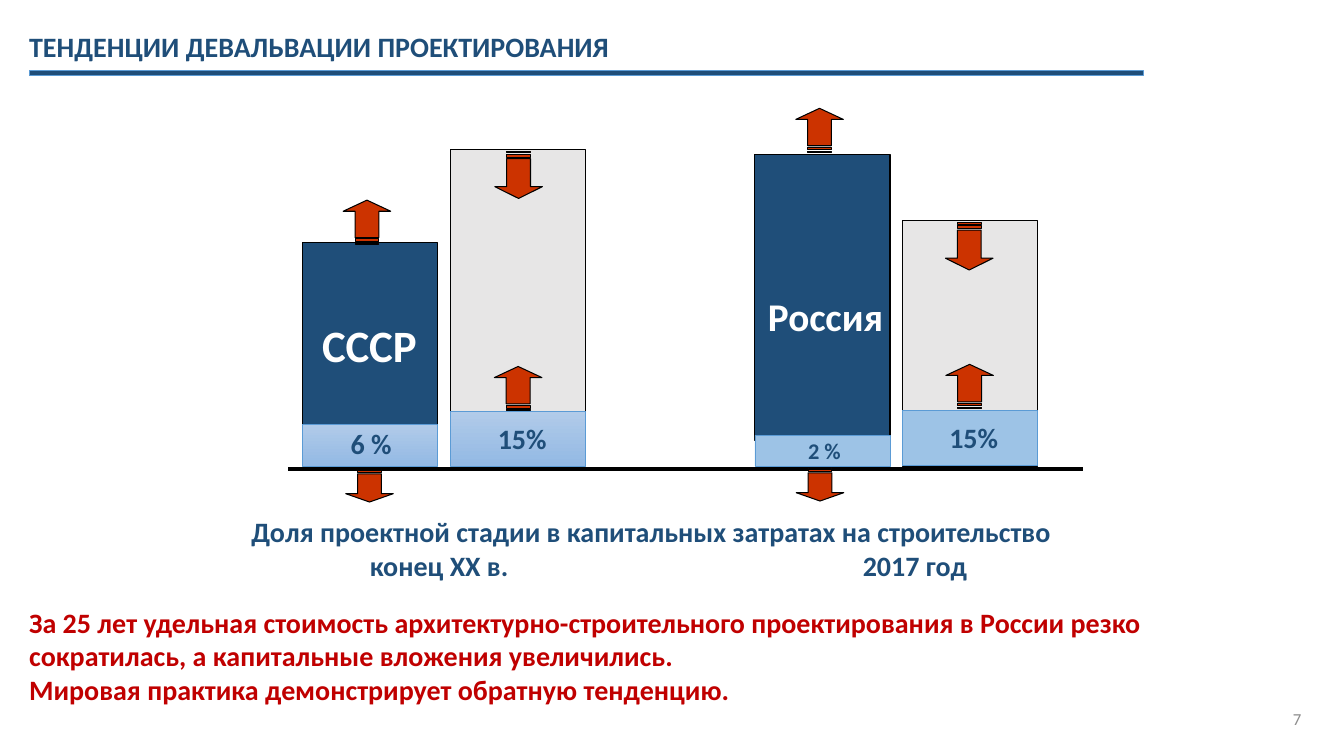
from lxml.etree import SubElement
from pptx import Presentation
from pptx.dml.color import RGBColor
from pptx.enum.shapes import MSO_CONNECTOR, MSO_SHAPE
from pptx.enum.text import MSO_ANCHOR, PP_ALIGN
from pptx.oxml.ns import qn
from pptx.util import Pt

TITLE = "ТЕНДЕНЦИИ ДЕВАЛЬВАЦИИ ПРОЕКТИРОВАНИЯ"
CAPTION = ["Доля проектной стадии в капитальных затратах на строительство",
           "\tконец ХХ в.\t2017 год"]
CAPTION_TABS = [121.7, 473.8]
CONCLUSION = ["За 25 лет удельная стоимость архитектурно-строительного проектирования "
              "в России резко сократилась, а капитальные вложения увеличились.",
              "Мировая практика демонстрирует обратную тенденцию."]
PAGE = "7"

THEME = {
    "font": "Calibri", "navy": "1F4E79", "red": "C00000", "white": "FFFFFF",
    "black": "000000", "pale": "E7E6E6", "sky": "9DC3E6", "edge": "5B9BD5",
    "arrow": "CC3300", "muted": "8C8C8C", "gradient": ("B1CBE9", "93B9E4"),
    "body": 20, "small": 16, "page": 12, "ussr": 32, "russia": 28,
}

BAR_W, BASELINE = 96.5, 332.8
BARS = [
    {"x": 216, "top": 173.5, "bottom": 310.3, "fill": "navy", "share_top": 303.1,
     "share_fill": "gradient", "label": ("6 %", 243.4, 301, 43.9, 31.7, "body")},
    {"x": 321.8, "top": 106.6, "bottom": 311, "fill": "pale", "share_top": 293.8,
     "share_fill": "gradient", "label": ("15%", 348.5, 297.4, 49.7, 31.7, "body")},
    {"x": 539.3, "top": 110.2, "bottom": 314.6, "fill": "navy", "share_top": 311,
     "share_fill": "sky", "label": ("2 %", 570.2, 308.9, 38.2, 26.6, "small")},
    {"x": 644.4, "top": 157.7, "bottom": 333.4, "fill": "pale", "share_top": 293,
     "share_fill": "sky", "label": ("15%", 671, 296.6, 49.7, 31.7, "body")},
]
COUNTRIES = [("СССР", 222.5, 223.2, 82.8, 65.5, "ussr"),
             ("Россия", 540.7, 205.2, 97.9, 41, "russia")]

UP, DOWN = 270, 90
ARROW_W = 34
ARROWS = [
    (370.4, 124.9, 33.8, DOWN), (263.9, 346.7, 23.8, DOWN),
    (585.7, 346, 23.8, DOWN), (692.3, 176, 33.8, DOWN),
    (262.1, 158.8, 31.7, UP), (370.1, 277.6, 31.7, UP),
    (585.4, 93.2, 31.7, UP), (692.6, 276.1, 31.7, UP),
]


def color(name):
    return RGBColor.from_string(THEME[name])


def add_text(s, lines, x, y, w, h, size="body", fill="navy", bold=True, wrap=False,
             align=(PP_ALIGN.LEFT,), anchor=MSO_ANCHOR.TOP, tabs=()):
    tf = s.shapes.add_textbox(Pt(x), Pt(y), Pt(w), Pt(h)).text_frame
    tf.word_wrap = wrap
    tf.vertical_anchor = anchor
    for i, line in enumerate(lines):
        p = tf.paragraphs[0] if i == 0 else tf.add_paragraph()
        p.alignment = align[min(i, len(align) - 1)]
        r = p.add_run()
        r.text = line
        r.font.name = THEME["font"]
        r.font.size = Pt(THEME[size])
        r.font.bold = bold
        r.font.color.rgb = color(fill)
        if "\t" in line:
            tab_list = SubElement(p._p.get_or_add_pPr(), qn("a:tabLst"))
            for pos in tabs:
                SubElement(tab_list, qn("a:tab"), pos=str(int(Pt(pos))), algn="l")


def add_block(s, kind, x, y, w, h, fill, line="black", weight=0.75):
    sp = s.shapes.add_shape(kind, Pt(x), Pt(y), Pt(w), Pt(h))
    sp.shadow.inherit = False
    if fill == "gradient":
        sp.fill.gradient()
        sp.fill.gradient_angle = 270
        for stop, shade in zip(sp.fill.gradient_stops, THEME[fill]):
            stop.color.rgb = RGBColor.from_string(shade)
    else:
        sp.fill.solid()
        sp.fill.fore_color.rgb = color(fill)
    sp.line.color.rgb = color(line)
    sp.line.width = Pt(weight)
    return sp


def add_arrow(s, cx, cy, length, turn):
    sp = add_block(s, MSO_SHAPE.STRIPED_RIGHT_ARROW, cx - length / 2, cy - ARROW_W / 2,
                   length, ARROW_W, "arrow")
    sp.adjustments[0] = 0.5
    sp.adjustments[1] = 0.25
    sp.rotation = turn


def add_baseline(s):
    line = s.shapes.add_connector(MSO_CONNECTOR.STRAIGHT, Pt(206), Pt(334.8), Pt(773.3), Pt(334.8))
    line.line.color.rgb = color("black")
    line.line.width = Pt(3)
    SubElement(line._element.spPr, qn("a:effectLst"))


def main():
    prs = Presentation()
    prs.slide_width, prs.slide_height = Pt(960), Pt(540)
    s = prs.slides.add_slide(prs.slide_layouts[6])

    add_text(s, CONCLUSION, 13.7, 423.4, 853.2, 90, fill="red", wrap=True,
             anchor=MSO_ANCHOR.MIDDLE)
    add_text(s, CAPTION, 135.4, 364.3, 659.5, 55.4, wrap=True,
             align=(PP_ALIGN.CENTER, PP_ALIGN.LEFT), tabs=CAPTION_TABS)

    for bar in BARS:
        add_block(s, MSO_SHAPE.RECTANGLE, bar["x"], bar["top"], BAR_W,
                  bar["bottom"] - bar["top"], bar["fill"])
    add_baseline(s)
    for bar in BARS:
        add_block(s, MSO_SHAPE.RECTANGLE, bar["x"], bar["share_top"], BAR_W,
                  BASELINE - bar["share_top"], bar["share_fill"], line="edge", weight=0.5)
        text, x, y, w, h, size = bar["label"]
        add_text(s, [text], x, y, w, h, size=size)

    for arrow in ARROWS:
        add_arrow(s, *arrow)
    for name, x, y, w, h, size in COUNTRIES:
        add_text(s, [name], x, y, w, h, size=size, fill="white", align=(PP_ALIGN.CENTER,))

    add_text(s, [TITLE], 13.7, 17.3, 432.7, 31.7)
    add_block(s, MSO_SHAPE.RECTANGLE, 20.9, 50.4, 795.6, 3.6, "navy", line="edge", weight=0.5)
    add_text(s, [PAGE], 720.7, 499, 216, 28.8, size="page", fill="muted", bold=False,
             wrap=True, align=(PP_ALIGN.RIGHT,), anchor=MSO_ANCHOR.MIDDLE)
    prs.save("out.pptx")


if __name__ == "__main__":
    main()
